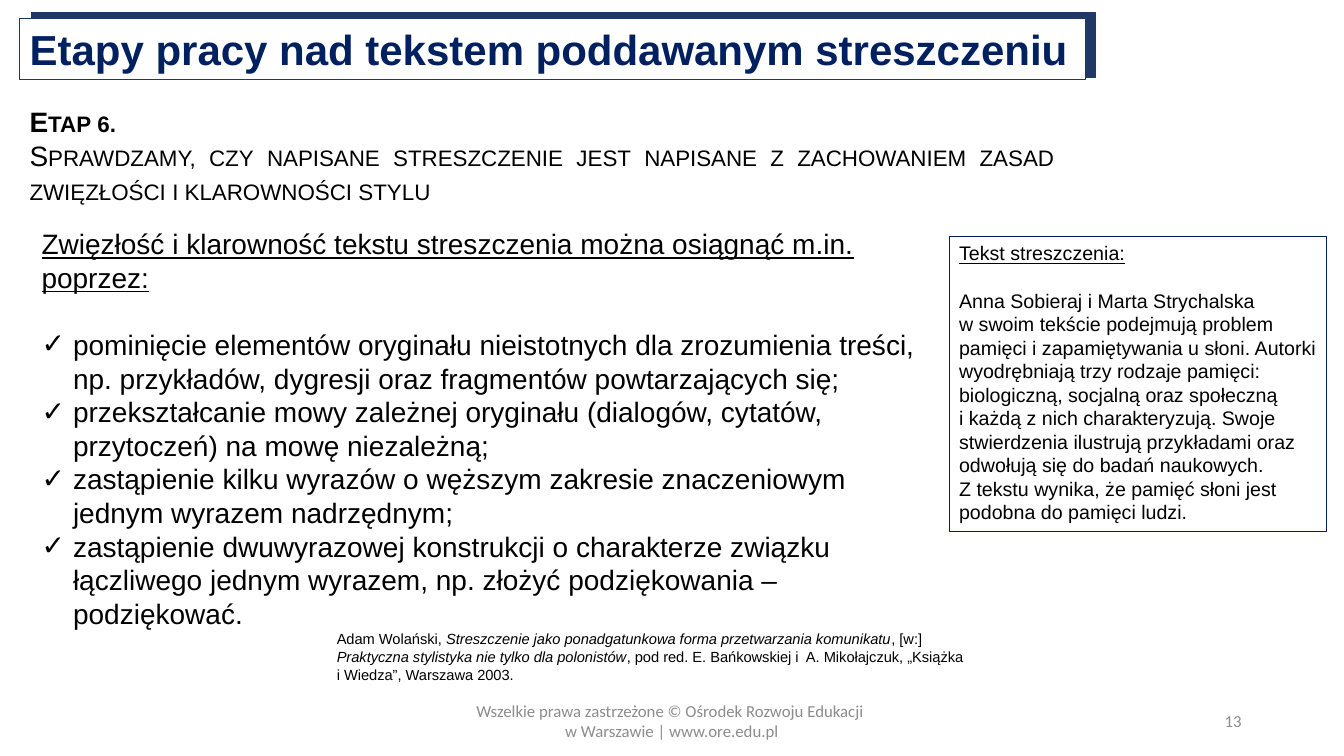
import dataclasses

import pptx
import pptx.dml.color
import pptx.enum.shapes
import pptx.enum.text
import pptx.oxml.ns
import pptx.util
from lxml import etree

Pt = pptx.util.Pt
Align = pptx.enum.text.PP_ALIGN
Anchor = pptx.enum.text.MSO_ANCHOR
AutoSize = pptx.enum.text.MSO_AUTO_SIZE


@dataclasses.dataclass(frozen=True)
class Theme:
    """Hold the colours, fonts and type sizes of the slide."""
    navy: str = "002060"
    shade: str = "203864"
    white: str = "FFFFFF"
    black: str = "000000"
    grey: str = "8C8C8C"
    font: str = "Arial"
    footer_font: str = "Calibri"
    title_size: float = 30
    body_size: float = 20
    summary_size: float = 14
    footer_size: float = 12
    source_size: float = 10.5
    line_width: float = 0.75
    line_pitch: float = 1.2


THEME = Theme()
BULLET_INDENT = 22.5
ITALIC = {"italic": True}
UNDERLINE = {"underline": True}

ADVICE_HEADING = "Zwięzłość i klarowność tekstu streszczenia można osiągnąć m.in. poprzez:"
ADVICE = [
    "pominięcie elementów oryginału nieistotnych dla zrozumienia treści, np. przykładów, "
    "dygresji oraz fragmentów powtarzających się;",
    "przekształcanie mowy zależnej oryginału (dialogów, cytatów, przytoczeń) na mowę niezależną;",
    "zastąpienie kilku wyrazów o węższym zakresie znaczeniowym jednym wyrazem nadrzędnym;",
    "zastąpienie dwuwyrazowej konstrukcji o charakterze związku łączliwego jednym wyrazem, "
    "np. złożyć podziękowania – podziękować.",
]
SUMMARY = [
    "Anna Sobieraj i Marta Strychalska",
    "w swoim tekście podejmują problem pamięci i zapamiętywania u słoni. Autorki wyodrębniają "
    "trzy rodzaje pamięci: biologiczną, socjalną oraz społeczną",
    "i każdą z nich charakteryzują. Swoje stwierdzenia ilustrują przykładami oraz odwołują się "
    "do badań naukowych.",
    "Z tekstu wynika, że pamięć słoni jest podobna do pamięci ludzi.",
]
SOURCE = [
    [("Adam Wolański, ", {}),
     ("Streszczenie jako ponadgatunkowa forma przetwarzania komunikatu", ITALIC),
     (", [w:] ", {}),
     ("Praktyczna stylistyka nie tylko dla polonistów", ITALIC),
     (", pod red. E. Bańkowskiej i  A. Mikołajczuk, „Książka", {})],
    [("i Wiedza”, Warszawa 2003.", {})],
]
FOOTER = ["Wszelkie prawa zastrzeżone © Ośrodek Rozwoju Edukacji ", "w Warszawie | www.ore.edu.pl"]


def rgb(value):
    """Return a colour object for a hex value."""
    return pptx.dml.color.RGBColor.from_string(value)


def apply(target, values):
    """Set each attribute named in a dict."""
    for name, value in values.items():
        setattr(target, name, value)


def place(shape, left, top, width, height):
    """Move and size a shape in points."""
    apply(shape, {"left": Pt(left), "top": Pt(top), "width": Pt(width), "height": Pt(height)})


def outline(shape, colour, fill=None):
    """Give a shape a thin line and an optional fill."""
    if fill:
        shape.fill.solid()
        shape.fill.fore_color.rgb = rgb(fill)
    else:
        shape.fill.background()
    shape.line.color.rgb = rgb(colour)
    shape.line.width = Pt(THEME.line_width)


def add_rectangle(slide, box, colour, fill=None):
    """Add a plain rectangle."""
    kind = pptx.enum.shapes.MSO_SHAPE.RECTANGLE
    shape = slide.shapes.add_shape(kind, *map(Pt, box))
    shape.shadow.inherit = False
    outline(shape, colour, fill)
    return shape


def add_text_box(slide, box):
    """Add an empty text box."""
    return slide.shapes.add_textbox(*map(Pt, box))


def write(shape, paragraphs, size, colour=THEME.black, font=THEME.font,
          alignment=Align.LEFT, anchor=Anchor.TOP, grow=True):
    """Write paragraphs, each a list of text and format pairs."""
    frame = shape.text_frame
    apply(frame, {"word_wrap": True, "vertical_anchor": anchor,
                  "auto_size": AutoSize.SHAPE_TO_FIT_TEXT if grow else AutoSize.NONE})
    for index, runs in enumerate(paragraphs):
        paragraph = frame.add_paragraph() if index else frame.paragraphs[0]
        paragraph.alignment = alignment
        for text, extra in runs:
            run = paragraph.add_run()
            run.text = text
            apply(run.font, {"name": font, "size": Pt(size), **extra})
            run.font.color.rgb = rgb(colour)
    return frame.paragraphs


def plain(texts):
    """Turn strings into unformatted paragraphs."""
    return [[(text, {})] for text in texts]


def add_gap(paragraph, size):
    """Leave one line of the given type size above a paragraph."""
    paragraph.space_before = Pt(round(size * THEME.line_pitch, 1))


def add_check_mark(paragraph):
    """Make a paragraph a check-marked list item."""
    properties = paragraph._p.get_or_add_pPr()
    properties.set("marL", str(Pt(BULLET_INDENT)))
    properties.set("indent", str(-Pt(BULLET_INDENT)))
    for tag, key, value in (("a:buFont", "typeface", THEME.font), ("a:buChar", "char", "✓")):
        etree.SubElement(properties, pptx.oxml.ns.qn(tag)).set(key, value)


def add_title(slide):
    """Format the title and put its dark backing behind it."""
    title = slide.shapes.title
    place(title, 14, 13, 761.4, 43.6)
    outline(title, THEME.shade, THEME.white)
    write(title, [[("Etapy pracy nad tekstem poddawanym streszczeniu", {"bold": True})]],
          THEME.title_size, THEME.navy, grow=False)
    backing = add_rectangle(slide, (22.3, 9.2, 760.6, 46), THEME.shade, THEME.shade)
    title.element.addprevious(backing.element)


def add_stage(slide):
    """Add the stage heading in small capitals."""
    paragraphs = write(add_text_box(slide, (14, 71.3, 746, 79.9)), [
        [("Etap 6. ", {"bold": True})],
        [("Sprawdzamy, czy napisane streszczenie jest napisane z zachowaniem zasad "
          "zwięzłości i klarowności stylu", {})],
    ], THEME.body_size, alignment=Align.JUSTIFY)
    for paragraph in paragraphs:
        for run in paragraph.runs:
            run._r.get_or_add_rPr().set("cap", "small")


def add_summary(slide):
    """Add the framed sample summary."""
    frame = add_rectangle(slide, (678, 168.9, 269.5, 211), THEME.navy)
    frame.text_frame.margin_right = Pt(5)
    paragraphs = write(frame, [[("Tekst streszczenia:", UNDERLINE)], *plain(SUMMARY)],
                       THEME.summary_size)
    add_gap(paragraphs[1], THEME.summary_size)


def add_advice(slide):
    """Add the check-marked advice list."""
    paragraphs = write(add_text_box(slide, (22.6, 158.4, 643.7, 298.1)),
                       [[(ADVICE_HEADING, UNDERLINE)], *plain(ADVICE)], THEME.body_size)
    add_gap(paragraphs[1], THEME.body_size)
    for paragraph in paragraphs[1:]:
        add_check_mark(paragraph)


def add_footer(slide, left, width, texts, alignment):
    """Add a grey footer text."""
    write(add_text_box(slide, (left, 500.5, width, 28.8)), plain(texts), THEME.footer_size,
          THEME.grey, THEME.footer_font, alignment, Anchor.MIDDLE, grow=False)


def main():
    """Build and save the slide."""
    presentation = pptx.Presentation()
    apply(presentation, {"slide_width": Pt(960), "slide_height": Pt(540)})
    slide = presentation.slides.add_slide(presentation.slide_layouts[5])
    add_footer(slide, 318, 324, FOOTER, Align.CENTER)
    add_footer(slide, 678, 216, ["13"], Align.RIGHT)
    add_title(slide)
    add_stage(slide)
    add_summary(slide)
    add_advice(slide)
    write(add_text_box(slide, (233.5, 446.6, 480.2, 45.4)), SOURCE, THEME.source_size)
    presentation.save("out.pptx")


if __name__ == "__main__":
    main()
